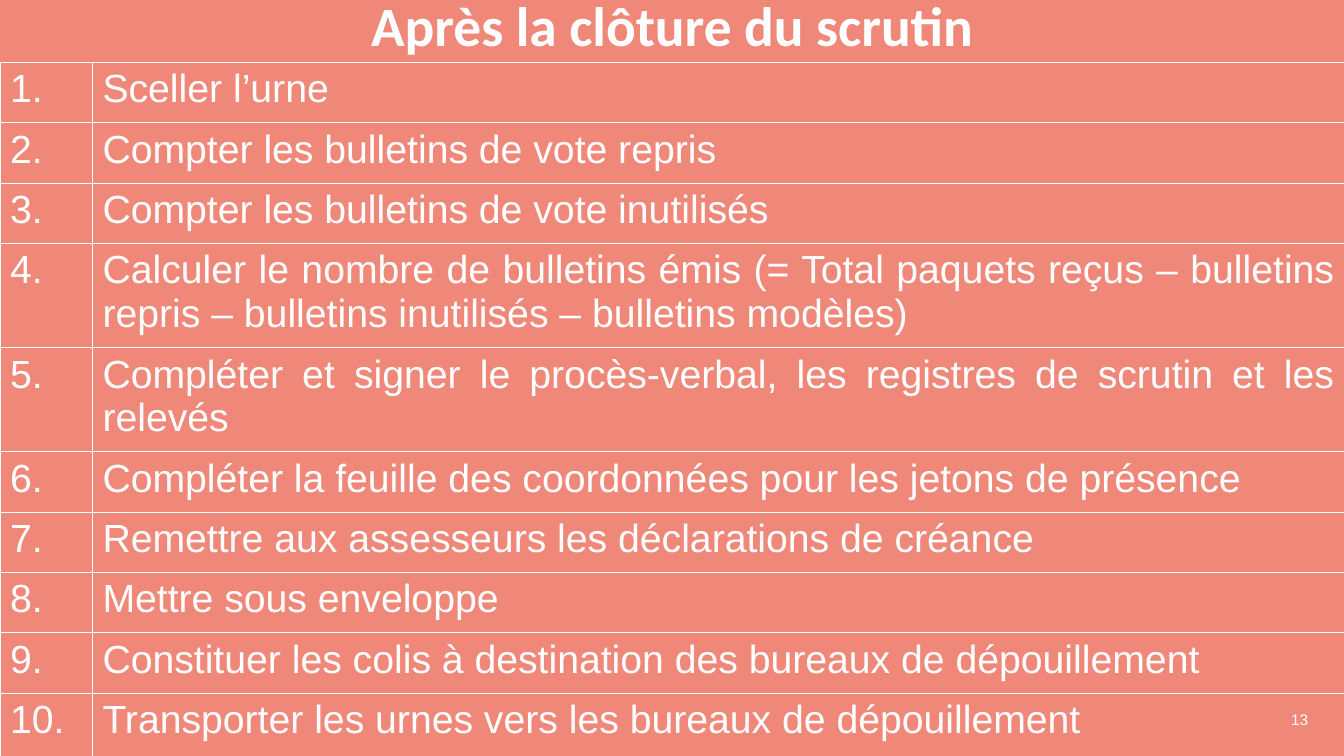
from lxml.etree import SubElement
from pptx import Presentation
from pptx.dml.color import RGBColor
from pptx.enum.text import MSO_ANCHOR as Anchor, PP_ALIGN as Align
from pptx.oxml.ns import qn
from pptx.util import Cm, Pt

STEPS = [
    "Sceller l’urne",
    "Compter les bulletins de vote repris",
    "Compter les bulletins de vote inutilisés",
    "Calculer le nombre de bulletins émis (= Total paquets reçus – bulletins repris"
    " – bulletins inutilisés – bulletins modèles)",
    "Compléter et signer le procès-verbal, les registres de scrutin et les relevés",
    "Compléter la feuille des coordonnées pour les jetons de présence",
    "Remettre aux assesseurs les déclarations de créance",
    "Mettre sous enveloppe",
    "Constituer les colis à destination des bureaux de dépouillement",
    "Transporter les urnes vers les bureaux de dépouillement",
]
SLIDE_WIDTH, SLIDE_HEIGHT = 33.87, 19.05
NUMBER_WIDTH = 2.33
ONE_LINE, TWO_LINES, LAST_ROW = 1.52, 2.44, 2.13
ONE_LINE_CHARS = 70


def color(hex_value):
    return RGBColor.from_string(hex_value)


class StepsSlide:
    background, ink = "EF8879", "FFFFFF"
    border_width = Pt(0.6)

    def __init__(self, deck):
        self.slide = deck.slides.add_slide(deck.slide_layouts[6])
        fill = self.slide.background.fill
        fill.solid()
        fill.fore_color.rgb = color(self.background)

    def add_words(self, paragraph, words, align, **font_format):
        paragraph.alignment = align
        run = paragraph.add_run()
        run.text = words
        run.font.color.rgb = color(self.ink)
        for name, value in font_format.items():
            setattr(run.font, name, value)

    def text(self, box, words, align, anchor, line_spacing=None, **font_format):
        frame = self.slide.shapes.add_textbox(*map(Cm, box)).text_frame
        frame.word_wrap = True
        frame.vertical_anchor = anchor
        paragraph = frame.paragraphs[0]
        paragraph.line_spacing = line_spacing
        self.add_words(paragraph, words, align, **font_format)

    def outline(self, cell):
        properties = cell._tc.get_or_add_tcPr()
        for position, side in enumerate(("lnL", "lnR", "lnT", "lnB")):
            line = properties.makeelement(qn(f"a:{side}"), {"w": str(self.border_width)})
            properties.insert(position, line)
            solid = SubElement(line, qn("a:solidFill"))
            SubElement(solid, qn("a:srgbClr"), val=self.ink)

    def numbered_table(self, left, top, widths, heights, steps):
        table = self.slide.shapes.add_table(
            len(steps), len(widths), Cm(left), Cm(top), Cm(sum(widths)), Cm(sum(heights))
        ).table
        table.first_row = table.horz_banding = False
        for column, width in zip(table.columns, widths):
            column.width = Cm(width)
        for number, (row, height, step) in enumerate(zip(table.rows, heights, steps), 1):
            row.height = Cm(height)
            for cell, content in zip(row.cells, (f"{number}.", step)):
                cell.fill.background()
                self.outline(cell)
                self.add_words(cell.text_frame.paragraphs[0], content, Align.JUSTIFY,
                               name="Arial", size=Pt(28))


def main():
    deck = Presentation()
    deck.slide_width, deck.slide_height = Cm(SLIDE_WIDTH), Cm(SLIDE_HEIGHT)
    closing = StepsSlide(deck)
    closing.text((4.04, 0.41, 25.81, 1.17), "Après la clôture du scrutin",
                 Align.CENTER, Anchor.BOTTOM, line_spacing=Pt(44),
                 name="Calibri", size=Pt(39.6), bold=True)
    closing.text((25.6, 17.63, 7.62, 1.02), "13", Align.RIGHT, Anchor.MIDDLE,
                 name="Arial", size=Pt(11))
    heights = [TWO_LINES if len(step) > ONE_LINE_CHARS else ONE_LINE for step in STEPS]
    heights[-1] = LAST_ROW
    closing.numbered_table(0, 1.57, (NUMBER_WIDTH, SLIDE_WIDTH - NUMBER_WIDTH),
                           heights, STEPS)
    deck.save("out.pptx")


if __name__ == "__main__":
    main()
